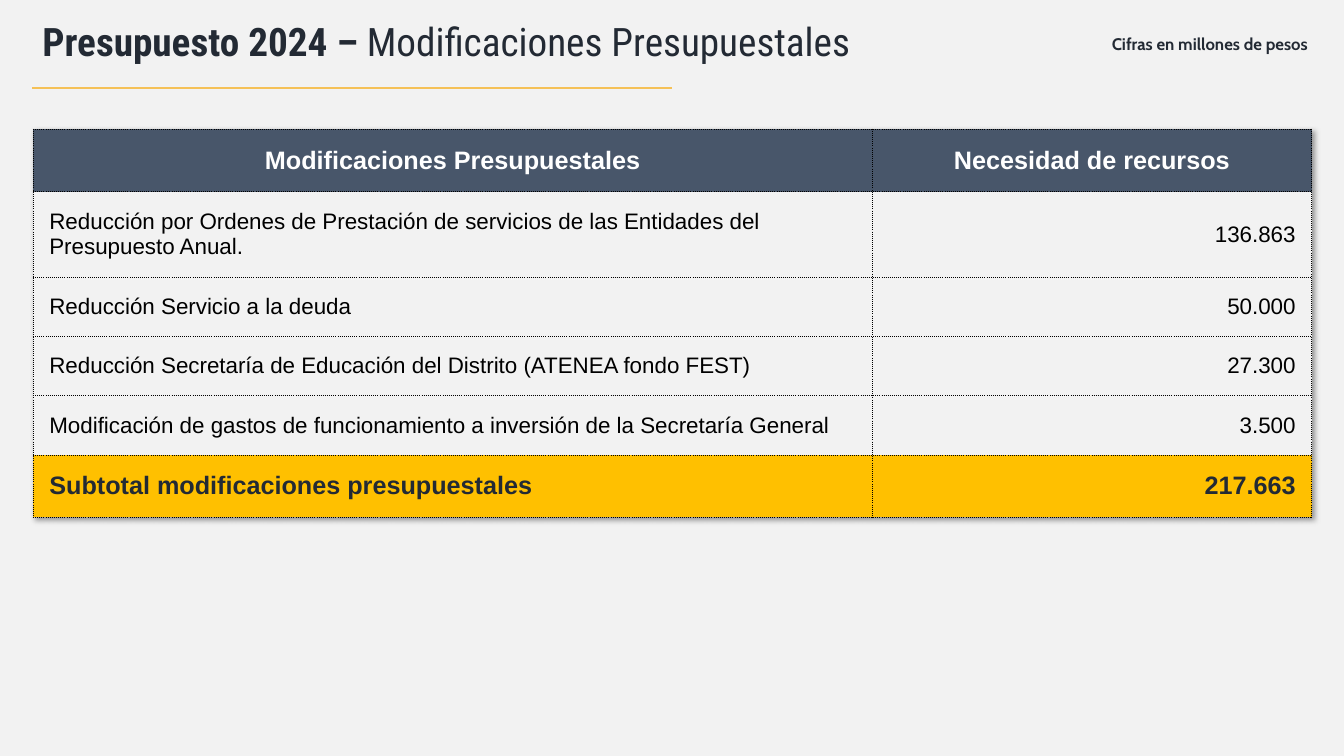
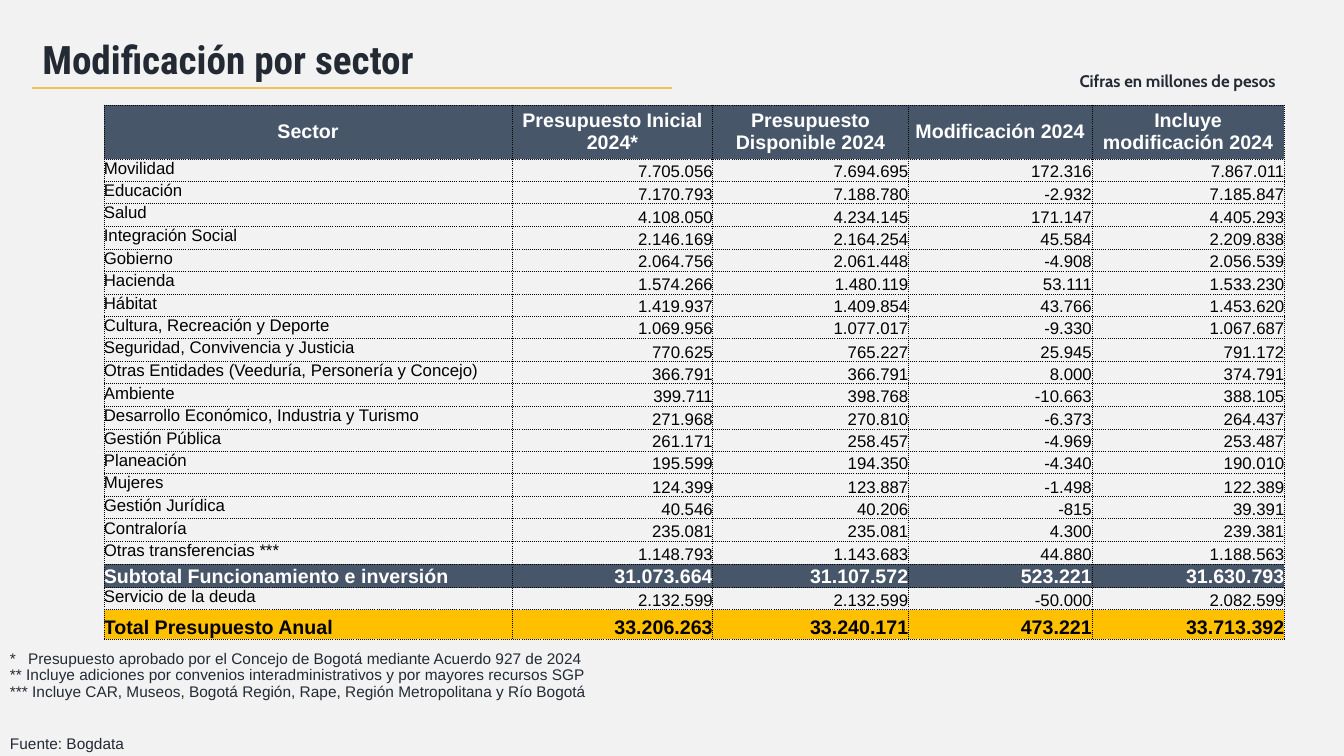
"""Build two budget slides: changes by item and changes by sector."""
from dataclasses import dataclass

from lxml import etree
from pptx import Presentation
from pptx import util as u
from pptx.dml.color import RGBColor
from pptx.enum import shapes, text
from pptx.oxml import parse_xml
from pptx.oxml.ns import nsdecls, qn

PX = 9144
PAPER, SLATE, GOLD, RULE = "F2F2F2", "48566A", "FFC000", "F5C157"
INK, BLACK, WHITE = "232A34", "000000", "FFFFFF"
LEFT, MID, RIGHT = text.PP_ALIGN.LEFT, text.PP_ALIGN.CENTER, text.PP_ALIGN.RIGHT
TOP, CORE, BASE = text.MSO_ANCHOR.TOP, text.MSO_ANCHOR.MIDDLE, text.MSO_ANCHOR.BOTTOM


@dataclass(frozen=True)
class Box:
    left: int
    top: int
    width: int
    height: int

    def emu(self) -> list[int]:
        return [n * PX for n in (self.left, self.top, self.width, self.height)]


@dataclass(frozen=True)
class Face:
    size: int
    name: str = "Arial"
    ink: str = INK
    bold: bool = False


@dataclass(frozen=True)
class Look:
    face: Face
    fill: str = PAPER
    label: text.MSO_ANCHOR = CORE
    value: text.MSO_ANCHOR = CORE
    aligns: tuple = (LEFT, RIGHT)


@dataclass(frozen=True)
class Row:
    look: Look
    height: int
    cells: list[str]


@dataclass(frozen=True)
class Note:
    box: Box
    lines: list[str]
    face: Face
    align: text.PP_ALIGN = LEFT
    space: float = 0.9
    tab: int = 0


def hue(code: str) -> RGBColor:
    return RGBColor.from_string(code)


def style(para, face: Face, align: text.PP_ALIGN) -> None:
    para.alignment = align
    font = para.font
    font.size, font.name, font.bold = u.Pt(face.size), face.name, face.bold
    font.color.rgb = hue(face.ink)


def add_title(slide, top: int, runs: list[tuple[str, bool]]) -> None:
    title = slide.shapes.title
    title.left, title.top, title.width, title.height = Box(32, top, 1241, 86).emu()
    frame = title.text_frame
    frame.auto_size, frame.vertical_anchor = text.MSO_AUTO_SIZE.NONE, CORE
    para = frame.paragraphs[0]
    para.line_spacing = 0.9
    style(para, Face(28, "Roboto Condensed", bold=True), LEFT)
    for words, bold in runs:
        run = para.add_run()
        run.text, run.font.bold = words, bold


def add_rule(slide) -> None:
    ends = [n * PX for n in (32, 87, 667, 87)]
    line = slide.shapes.add_connector(shapes.MSO_CONNECTOR.STRAIGHT, *ends)
    line.line.color.rgb, line.line.width = hue(RULE), u.Pt(1.5)
    etree.SubElement(line._element.spPr, qn("a:effectLst"))


def add_note(slide, note: Note) -> None:
    frame = slide.shapes.add_textbox(*note.box.emu()).text_frame
    frame.word_wrap = True
    for i, words in enumerate(note.lines):
        para = frame.add_paragraph() if i else frame.paragraphs[0]
        para.line_spacing = note.space
        if note.tab and "\t" in words:
            tabs = etree.SubElement(para._p.get_or_add_pPr(), qn("a:tabLst"))
            etree.SubElement(tabs, qn("a:tab"), pos=str(note.tab * PX), algn="l")
        style(para, note.face, note.align)
        para.add_run().text = words


def add_unit(slide, left: int, top: int) -> None:
    face = Face(12, "Cabin", bold=True)
    words = ["Cifras en millones de pesos"]
    add_note(slide, Note(Box(left, top, 266, 30), words, face, MID, 1.0))


def add_edges(cell) -> None:
    props = cell._tc.get_or_add_tcPr()
    for i, side in enumerate("LRTB"):
        props.insert(i, parse_xml(
            f'<a:ln{side} {nsdecls("a")} w="6350"><a:solidFill><a:srgbClr val="{BLACK}"/>'
            f'</a:solidFill><a:prstDash val="sysDot"/></a:ln{side}>'))


def add_shade(table) -> None:
    table._tbl.tblPr.insert(0, parse_xml(
        f'<a:effectLst {nsdecls("a")}><a:outerShdw blurRad="50800" dist="38100" dir="2700000" '
        f'algn="tl" rotWithShape="0"><a:srgbClr val="{BLACK}"><a:alpha val="40000"/>'
        '</a:srgbClr></a:outerShdw></a:effectLst>'))


def add_grid(slide, left: int, top: int, widths: list[int], rows: list[Row], inset: int):
    box = Box(left, top, sum(widths), sum(row.height for row in rows))
    table = slide.shapes.add_table(len(rows), len(widths), *box.emu()).table
    table.first_row = table.horz_banding = False
    for col, width in zip(table.columns, widths):
        col.width = width * PX
    for r, row in enumerate(rows):
        table.rows[r].height = row.height * PX
        look = row.look
        for c, words in enumerate(row.cells):
            cell = table.cell(r, c)
            cell.margin_left = cell.margin_right = inset * PX
            cell.margin_top = cell.margin_bottom = inset * PX
            cell.vertical_anchor = look.value if c else look.label
            cell.fill.solid()
            cell.fill.fore_color.rgb = hue(look.fill)
            add_edges(cell)
            para = cell.text_frame.paragraphs[0]
            style(para, look.face, look.aligns[min(c, 1)])
            para.add_run().text = words
    return table


def add_items(deck) -> None:
    slide = deck.slides.add_slide(deck.slide_layouts[5])
    add_title(slide, 0, [("Presupuesto 2024 – ", True), ("Modificaciones Presupuestales", False)])
    add_rule(slide)
    add_unit(slide, 1067, 29)
    head = Look(Face(18, ink=WHITE, bold=True), SLATE, aligns=(MID, MID))
    body = Look(Face(16, ink=BLACK))
    total = Look(Face(18, bold=True), GOLD)
    rows = [
        Row(head, 60, ["Modificaciones Presupuestales", "Necesidad de recursos"]),
        Row(body, 81, ["Reducción por Ordenes de Prestación de servicios de las Entidades del "
                       "Presupuesto Anual.", "136.863"]),
        Row(body, 56, ["Reducción Servicio a la deuda", "50.000"]),
        Row(body, 56, ["Reducción Secretaría de Educación del Distrito (ATENEA fondo FEST)",
                       "27.300"]),
        Row(body, 56, ["Modificación de gastos de funcionamiento a inversión de la "
                       "Secretaría General", "3.500"]),
        Row(total, 60, ["Subtotal modificaciones presupuestales", "217.663"]),
    ]
    add_shade(add_grid(slide, 33, 128, [832, 436], rows, 16))


SECTORS = [
    "Movilidad|7.705.056|7.694.695|172.316|7.867.011",
    "Educación|7.170.793|7.188.780|-2.932|7.185.847",
    "Salud|4.108.050|4.234.145|171.147|4.405.293",
    "Integración Social|2.146.169|2.164.254|45.584|2.209.838",
    "Gobierno|2.064.756|2.061.448|-4.908|2.056.539",
    "Hacienda|1.574.266|1.480.119|53.111|1.533.230",
    "Hábitat|1.419.937|1.409.854|43.766|1.453.620",
    "Cultura, Recreación y Deporte|1.069.956|1.077.017|-9.330|1.067.687",
    "Seguridad, Convivencia y Justicia|770.625|765.227|25.945|791.172",
    "Otras Entidades (Veeduría, Personería y Concejo)|366.791|366.791|8.000|374.791",
    "Ambiente|399.711|398.768|-10.663|388.105",
    "Desarrollo Económico, Industria y Turismo|271.968|270.810|-6.373|264.437",
    "Gestión Pública|261.171|258.457|-4.969|253.487",
    "Planeación|195.599|194.350|-4.340|190.010",
    "Mujeres|124.399|123.887|-1.498|122.389",
    "Gestión Jurídica|40.546|40.206|-815|39.391",
    "Contraloría|235.081|235.081|4.300|239.381",
    "Otras transferencias ***|1.148.793|1.143.683|44.880|1.188.563",
]


def add_sectors(deck) -> None:
    slide = deck.slides.add_slide(deck.slide_layouts[5])
    add_title(slide, 18, [("Modificación por sector", True)])
    add_rule(slide)
    add_unit(slide, 1035, 65)
    head = Look(Face(14, ink=WHITE, bold=True), SLATE, aligns=(MID, MID))
    body = Look(Face(12, ink=BLACK), label=TOP, value=BASE)
    part = Look(Face(14, ink=WHITE, bold=True), SLATE, BASE, BASE)
    total = Look(Face(14, ink=BLACK, bold=True), GOLD, BASE, BASE)
    rows = [
        Row(head, 54, ["Sector", "Presupuesto Inicial 2024*", "Presupuesto Disponible 2024",
                       "Modificación 2024", "Incluye modificación 2024"]),
        *(Row(body, 23 if i % 3 == 2 else 22, line.split("|"))
          for i, line in enumerate(SECTORS)),
        Row(part, 23, ["Subtotal Funcionamiento e inversión", "31.073.664", "31.107.572",
                       "523.221", "31.630.793"]),
        Row(body, 22, ["Servicio de la deuda", "2.132.599", "2.132.599", "-50.000", "2.082.599"]),
        Row(total, 29, ["Total Presupuesto Anual", "33.206.263", "33.240.171", "473.221",
                        "33.713.392"]),
    ]
    add_grid(slide, 103, 104, [405, 199, 194, 182, 191], rows, 0)
    small = Face(11)
    for note in (
        Note(Box(0, 641, 926, 43), [
            "*\tPresupuesto aprobado por el Concejo de Bogotá mediante Acuerdo 927 de 2024",
            "** Incluye adiciones por convenios interadministrativos y por mayores recursos SGP",
        ], small, tab=18),
        Note(Box(0, 674, 666, 27), [
            "*** Incluye CAR, Museos, Bogotá Región, Rape, Región Metropolitana y Río Bogotá",
        ], small),
        Note(Box(0, 725, 232, 25), ["Fuente: Bogdata"], small),
    ):
        add_note(slide, note)


def main() -> None:
    deck = Presentation()
    deck.slide_width, deck.slide_height = 1333 * PX, 750 * PX
    fill = deck.slide_master.background.fill
    fill.solid()
    fill.fore_color.rgb = hue(PAPER)
    add_items(deck)
    add_sectors(deck)
    deck.save("out.pptx")


if __name__ == "__main__":
    main()
